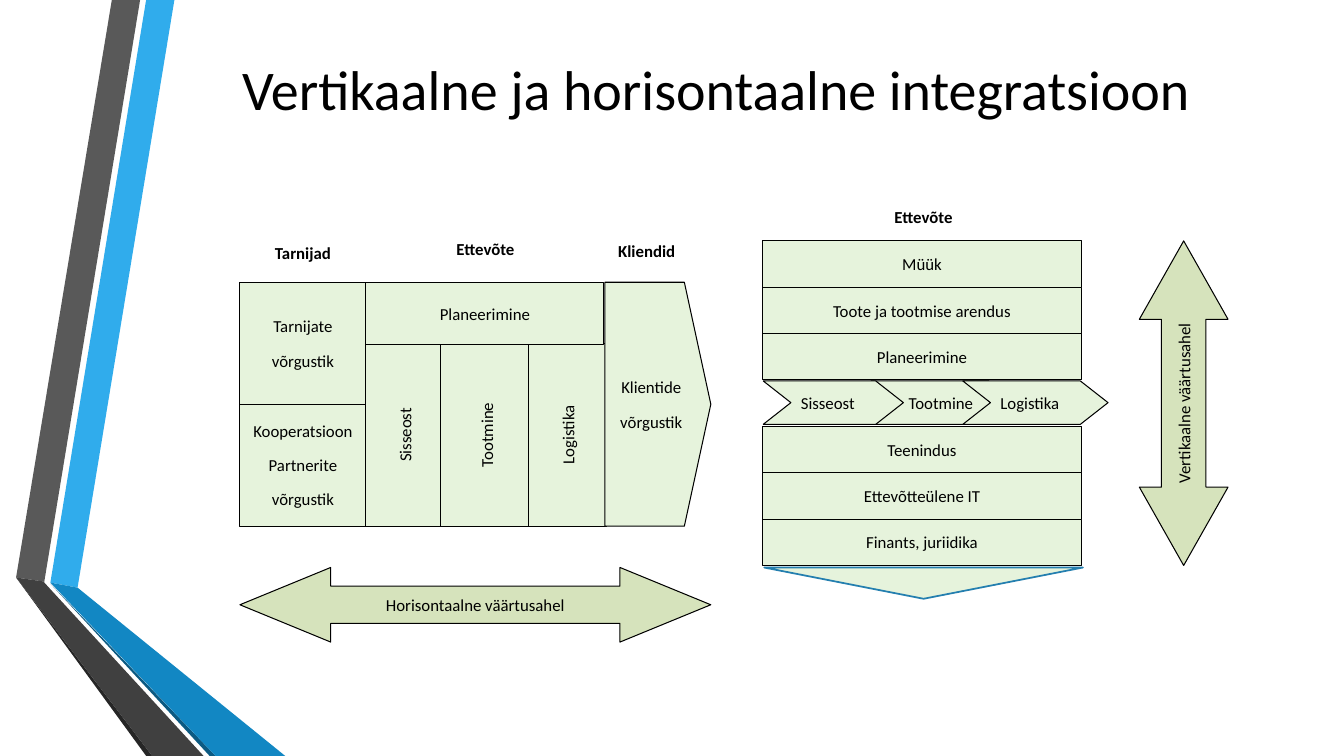
import pptx
import pptx.util
import pptx.dml.color
import pptx.enum.shapes
import pptx.enum.text

Inches = pptx.util.Inches
Pt = pptx.util.Pt
KIND = pptx.enum.shapes.MSO_SHAPE
ALIGN = pptx.enum.text.PP_ALIGN
ANCHOR = pptx.enum.text.MSO_ANCHOR
PALE, OLIVE, BLACK = "E6F3DC", "D6E3BC", "000000"

BANDS = [
    ("30ACEC", [(0.5, 5.78), (0.77, 5.83), (1.73, 0), (1.45, 0)]),
    ("595959", [(1.39, 0), (1.11, 0), (0.16, 5.73), (0.44, 5.77)]),
    ("262626", [(0.16, 5.73), (1.45, 7.5), (1.51, 7.5)]),
    ("0C5A82", [(0.5, 5.79), (2.08, 7.5), (2.14, 7.5)]),
    ("1287C3", [(0.5, 5.78), (2.14, 7.5), (2.83, 7.5), (0.77, 5.83)]),
    ("404040", [(2.02, 7.5), (0.44, 5.78), (0.44, 5.77), (0.16, 5.73), (1.51, 7.5)]),
]


def color(code):
    return pptx.dml.color.RGBColor.from_string(code)


def write(frame, text, size=12, bold=False, align=ALIGN.CENTER, after=10):
    frame.word_wrap = True
    frame.text = text
    for para in frame.paragraphs:
        para.alignment = align
        para.space_after = Pt(after)
        para.font.name = "Calibri"
        para.font.size = Pt(size)
        para.font.bold = bold
        para.font.color.rgb = color(BLACK)


def block(slide, box, text="", kind=KIND.RECTANGLE, fill=PALE, line=BLACK,
          width=0.75, adjust=(), turn=0, upright=False, align=ALIGN.CENTER):
    shape = slide.shapes.add_shape(kind, *map(Inches, box))
    shape.shadow.inherit = False
    shape.fill.solid()
    shape.fill.fore_color.rgb = color(fill)
    shape.line.color.rgb = color(line)
    shape.line.width = Pt(width)
    shape.rotation = turn
    for i, value in enumerate(adjust):
        shape.adjustments[i] = value
    if text:
        frame = shape.text_frame
        write(frame, text, align=align)
        frame.vertical_anchor = ANCHOR.MIDDLE
        if upright:
            frame._txBody.bodyPr.set("vert", "vert270")


def label(slide, box, text):
    frame = slide.shapes.add_textbox(*map(Inches, box)).text_frame
    write(frame, text, bold=True)


def band(slide, fill, points):
    spots = [(Inches(x), Inches(y)) for x, y in points]
    form = slide.shapes.build_freeform(*spots[0])
    form.add_line_segments(spots[1:], close=True)
    shape = form.convert_to_shape()
    shape.shadow.inherit = False
    shape.fill.solid()
    shape.fill.fore_color.rgb = color(fill)
    shape.line.fill.background()


def title(slide, text):
    head = slide.shapes.title
    head.left, head.top = Inches(1.62), Inches(0.17)
    head.width, head.height = Inches(10.96), Inches(1.4)
    write(head.text_frame, text, size=40, after=0)
    head.text_frame.vertical_anchor = ANCHOR.MIDDLE


def across(slide):
    # Headings
    label(slide, (2.38, 2.36, 1.25, 0.28), "Tarnijad")
    label(slide, (3.63, 2.32, 2.37, 0.32), "Ettevõte")
    label(slide, (6, 2.34, 0.83, 0.34), "Kliendid")

    # Suppliers, company and customers
    block(slide, (2.38, 4, 1.25, 1.22), "Kooperatsioon\nPartnerite\nvõrgustik")
    block(slide, (2.38, 2.8, 1.25, 1.21), "Tarnijate\nvõrgustik")
    for left, width, text in [(3.63, 0.77, "Sisseost"), (4.37, 0.91, "Tootmine"),
                              (5.24, 0.78, "Logistika")]:
        block(slide, (left, 3.41, width, 1.81), text, upright=True)
    block(slide, (3.63, 2.8, 2.36, 0.62), "Planeerimine")
    block(slide, (6, 2.8, 1.05, 2.42), "Klientide\nvõrgustik",
          KIND.PENTAGON, adjust=[0.25])

    # Horizontal value chain
    block(slide, (2.38, 5.63, 4.67, 0.74), "Horisontaalne väärtusahel",
          KIND.LEFT_RIGHT_ARROW, OLIVE, adjust=[0.5, 1.217])


def upward(slide):
    label(slide, (7.58, 2, 3.16, 0.31), "Ettevõte")

    # Layers above and below the chevrons
    layers = ["Müük", "Toote ja tootmise arendus", "Planeerimine", None,
              "Teenindus", "Ettevõtteülene IT", "Finants, juriidika"]
    for i, text in enumerate(layers):
        if text:
            block(slide, (7.56, 2.39 + 0.46 * i, 3.17, 0.46), text)

    # Process chevrons, the first one lying over the second
    for left, width, text in [(8.64, 1.44, "Tootmine"), (7.57, 1.39, "Sisseost"),
                              (9.55, 1.44, "Logistika")]:
        block(slide, (left, 3.78, width, 0.43), text, KIND.CHEVRON,
              adjust=[0.638], align=ALIGN.LEFT)

    # Downward tip
    block(slide, (7.58, 5.63, 3.16, 0.31), kind=KIND.ISOSCELES_TRIANGLE,
          line="247FAF", width=1.25, turn=180)

    # Vertical value chain
    block(slide, (10.13, 3.56, 3.22, 0.88), "Vertikaalne väärtusahel",
          KIND.LEFT_RIGHT_ARROW, OLIVE, adjust=[0.5, 0.884], turn=270)


def main():
    deck = pptx.Presentation()
    deck.slide_width, deck.slide_height = Inches(13.33), Inches(7.5)
    slide = deck.slides.add_slide(deck.slide_layouts[5])
    for fill, points in BANDS:
        band(slide, fill, points)
    title(slide, "Vertikaalne ja horisontaalne integratsioon")
    across(slide)
    upward(slide)
    deck.save("out.pptx")


if __name__ == "__main__":
    main()
